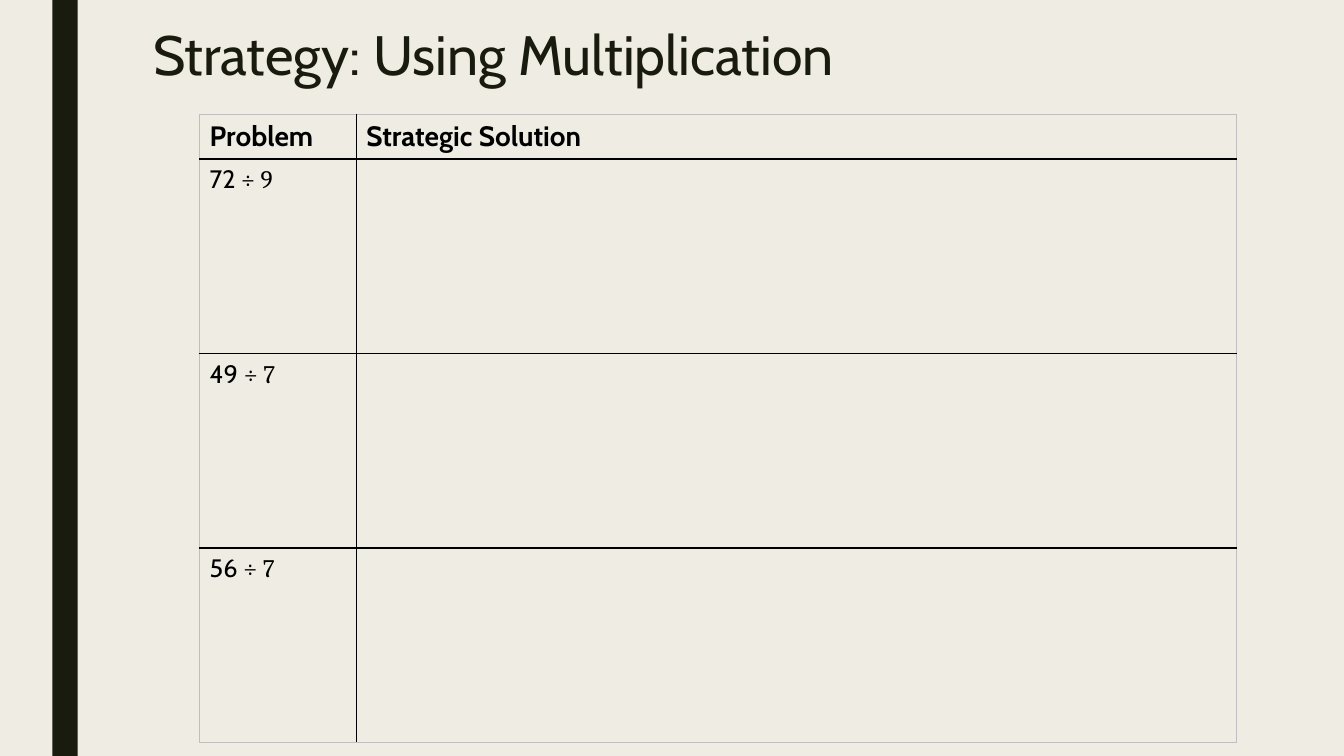
from lxml import etree
from pptx import Presentation, util as u
from pptx.dml.color import RGBColor
from pptx.enum import shapes, text
from pptx.oxml import ns

INK, PAPER, BLACK, GREY = "191B0E", "EFEDE3", "000000", "BFBFBF"
BODY, MATH = "Cabin", "Cambria"


def color(value):
    return RGBColor.from_string(value)


class Deck:
    """Current slide and its style; lengths are percentages of the slide's size."""

    def __init__(self):
        self.prs = Presentation()
        self.prs.slide_width, self.prs.slide_height = u.Inches(13.33), u.Inches(7.5)
        self.slide = self.prs.slides.add_slide(self.prs.slide_layouts[6])
        fill = self.slide.background.fill
        fill.solid()
        fill.fore_color.rgb = color(PAPER)

    def x(self, share):
        return round(self.prs.slide_width * share / 100)

    def y(self, share):
        return round(self.prs.slide_height * share / 100)

    def box(self, left, top, width, height):
        return self.x(left), self.y(top), self.x(width), self.y(height)

    def font(self, font, size, shade, bold=False):
        font.name, font.size, font.bold = BODY, u.Pt(size), bold
        font.color.rgb = color(shade)

    def bar(self, *place):
        sp = self.slide.shapes.add_shape(shapes.MSO_SHAPE.RECTANGLE, *self.box(*place))
        sp.shadow.inherit = False
        sp.fill.solid()
        sp.fill.fore_color.rgb = color(INK)
        sp.line.fill.background()

    def title(self, words, *place):
        tf = self.slide.shapes.add_textbox(*self.box(*place)).text_frame
        tf.word_wrap = True
        tf.vertical_anchor = text.MSO_ANCHOR.TOP
        p = tf.paragraphs[0]
        p.text, p.line_spacing = words, 0.89
        self.font(p.font, 39.6, INK)

    def border(self, cell, side, shade, width):
        ln = etree.SubElement(cell._tc.get_or_add_tcPr(), ns.qn(f"a:ln{side}"),
                              w=str(u.Pt(width)))
        fill = etree.SubElement(ln, ns.qn("a:solidFill"))
        etree.SubElement(fill, ns.qn("a:srgbClr"), val=shade)

    def table(self, left, top, widths, heights, rows):
        place = self.box(left, top, sum(widths), sum(heights))
        table = self.slide.shapes.add_table(len(rows), len(widths), *place).table
        for column, width in zip(table.columns, widths):
            column.width = self.x(width)
        for row, height in zip(table.rows, heights):
            row.height = self.y(height)
        last_row, last_col = len(rows) - 1, len(widths) - 1
        for i, row in enumerate(rows):
            for j, runs in enumerate(row):
                cell = table.cell(i, j)
                # Grey outer frame, black inner lines, heavier rule under the header
                edges = {"L": j == 0, "R": j == last_col, "T": i == 0, "B": i == last_row}
                for side, outer in edges.items():
                    header_rule = (i, side) in ((0, "B"), (1, "T"))
                    self.border(cell, side, GREY if outer else BLACK,
                                2 if header_rule else 1)
                cell.fill.background()
                p = cell.text_frame.paragraphs[0]
                self.font(p.font, 18 if i else 20, BLACK, bold=i == 0)
                for words, face in runs:
                    r = p.add_run()
                    r.text, r.font.name = words, face


def main():
    deck = Deck()

    # Side bar and title
    deck.bar(3.9, 0, 1.88, 100)
    deck.title("Strategy: Using Multiplication", 10.65, 3.07, 78.77, 10)

    # Problems with room for solutions
    header = [[(words, BODY)] for words in ("Problem", "Strategic Solution")]
    problems = [(72, 9), (49, 7), (56, 7)]
    rows = [header] + [[[(f"{a} ", BODY), (f"÷ {b}", MATH)], []] for a, b in problems]
    deck.table(14.85, 15.15, [11.66, 65.5], [5.9] + [25.73] * len(problems), rows)

    deck.prs.save("out.pptx")


if __name__ == "__main__":
    main()
